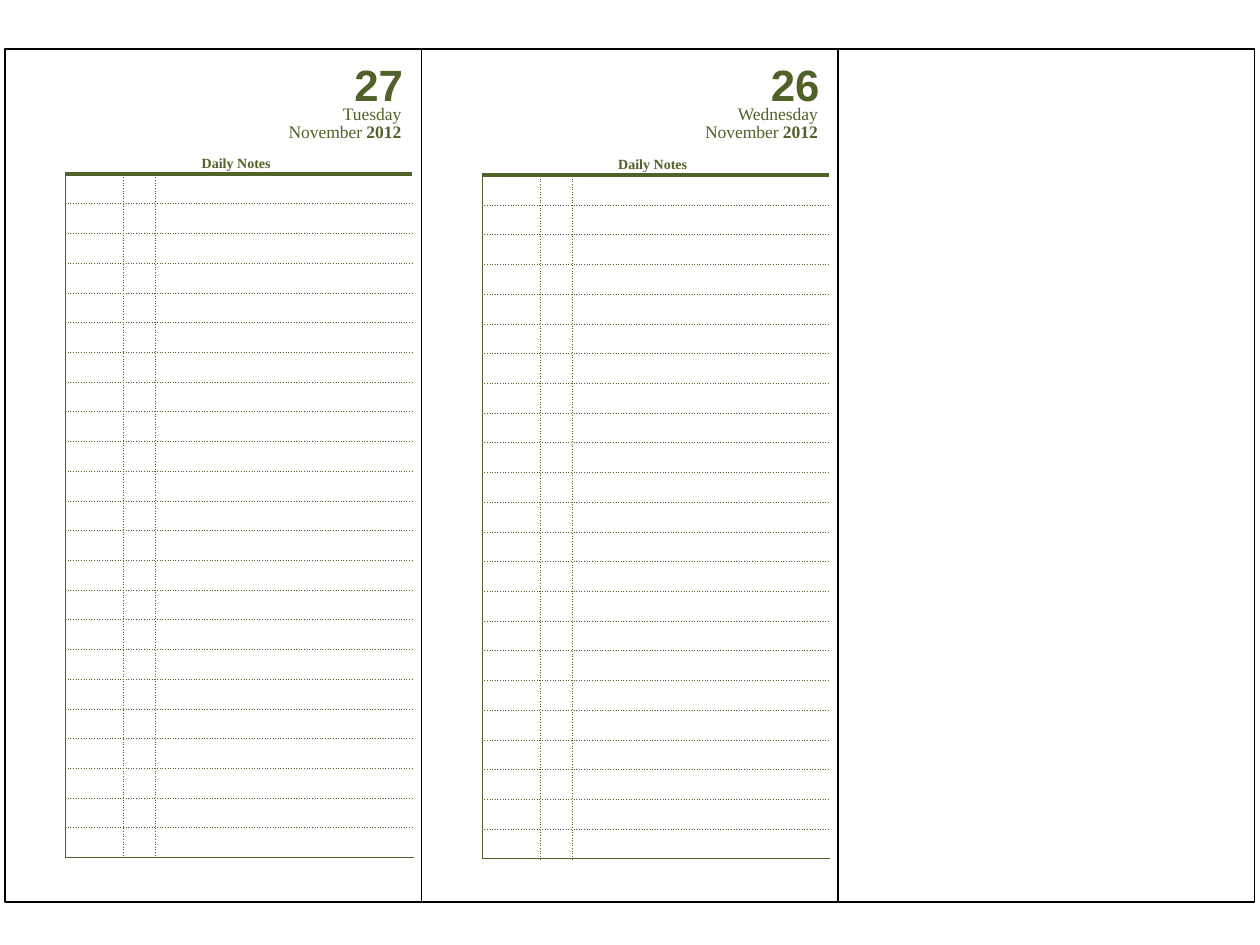
from lxml import etree
from pptx import Presentation
from pptx.dml.color import RGBColor
from pptx.enum import shapes, text
from pptx.oxml import ns
from pptx.util import Pt

COLORS = {"frame": "000000", "green": "4F6228", "blank": "FFFFFF"}
SERIF = "Times New Roman"

PAGE_LEFT, PAGE_TOP = 2.88, 28.08
PAGE_WIDTH, PAGE_HEIGHT = 238, 487.44
COLUMN_WIDTHS = (33.12, 18.36, 147.24)
ROW_COUNT, ROW_HEIGHT = 23, 17

# Border styles: colour name, width in points, dash
DOTTED = ("green", 0.25, "dot")
THIN = ("green", 0.5, "solid")
THICK = ("green", 2.25, "solid")
OPEN_EDGE = ("blank", 1, "solid")


def color(name):
    return RGBColor.from_string(COLORS[name])


def add_page_frame(slide, left):
    shape = slide.shapes.add_shape(
        shapes.MSO_SHAPE.RECTANGLE,
        Pt(left), Pt(PAGE_TOP), Pt(PAGE_WIDTH), Pt(PAGE_HEIGHT))
    shape.shadow.inherit = False
    shape.fill.background()
    shape.line.color.rgb = color("frame")
    shape.line.width = Pt(1)


def add_text(slide, lines, left, top, width, height, size, font=SERIF,
             align=None, line_spacing=None):
    """Add a text box; each line is a list of (text, bold) runs."""
    box = slide.shapes.add_textbox(Pt(left), Pt(top), Pt(width), Pt(height))
    frame = box.text_frame
    frame.word_wrap = True
    frame.auto_size = text.MSO_AUTO_SIZE.SHAPE_TO_FIT_TEXT
    for index, runs in enumerate(lines):
        paragraph = frame.add_paragraph() if index else frame.paragraphs[0]
        paragraph.alignment = align
        if line_spacing:
            paragraph.line_spacing = Pt(line_spacing)
        for content, bold in runs:
            run = paragraph.add_run()
            run.text = content
            run.font.name = font
            run.font.size = Pt(size)
            run.font.bold = bold
            run.font.color.rgb = color("green")


def set_border(cell, side, style):
    name, width, dash = style
    properties = cell._tc.get_or_add_tcPr()
    line = etree.SubElement(properties, ns.qn(f"a:ln{side}"), w=str(Pt(width)))
    fill = etree.SubElement(line, ns.qn("a:solidFill"))
    etree.SubElement(fill, ns.qn("a:srgbClr"), val=COLORS[name])
    etree.SubElement(line, ns.qn("a:prstDash"), val=dash)


def format_empty_cell(cell):
    """Keep the blank paragraph small enough for the row height."""
    cell.margin_top = cell.margin_bottom = 0
    paragraph = cell.text_frame.paragraphs[0]
    etree.SubElement(paragraph._p, ns.qn("a:endParaRPr"), sz="800")


def add_notes_grid(slide, left, top):
    table = slide.shapes.add_table(
        ROW_COUNT, len(COLUMN_WIDTHS), Pt(left), Pt(top),
        Pt(sum(COLUMN_WIDTHS)), Pt(ROW_COUNT * ROW_HEIGHT)).table
    table.first_row = table.horz_banding = False
    for column, width in zip(table.columns, COLUMN_WIDTHS):
        column.width = Pt(width)
    last_row, last_column = ROW_COUNT - 1, len(COLUMN_WIDTHS) - 1
    for row_index, row in enumerate(table.rows):
        row.height = Pt(ROW_HEIGHT)
        for column_index, cell in enumerate(row.cells):
            format_empty_cell(cell)
            set_border(cell, "L", DOTTED if column_index else THIN)
            set_border(cell, "R", OPEN_EDGE if column_index == last_column else DOTTED)
            set_border(cell, "T", DOTTED if row_index else THICK)
            set_border(cell, "B", THIN if row_index == last_row else DOTTED)
            cell.fill.background()


def add_day(slide, left, day, weekday, notes_top):
    add_text(slide, [[(day, True)]], left + 192.6, 29.52, 45.36, 37.44,
             size=25, font="Arial")
    add_text(slide, [[(weekday, False)], [("November ", False), ("2012", True)]],
             left + 103.2, 57.6, 130.32, 27.36, size=10,
             align=text.PP_ALIGN.RIGHT, line_spacing=10)
    add_text(slide, [[("Daily Notes", True)]], left + 30.96, notes_top,
             202.32, 17.28, size=8, align=text.PP_ALIGN.CENTER, line_spacing=10)
    add_notes_grid(slide, left + 34.56, notes_top + 15.12)


def main():
    presentation = Presentation()
    presentation.slide_width, presentation.slide_height = Pt(720), Pt(540)
    slide = presentation.slides.add_slide(presentation.slide_layouts[6])
    page_lefts = [PAGE_LEFT + index * PAGE_WIDTH for index in range(3)]
    for left in page_lefts:
        add_page_frame(slide, left)
    days = [("27", "Tuesday", 84.24), ("26", "Wednesday", 84.96)]
    for left, day in zip(page_lefts, days):
        add_day(slide, left, *day)
    presentation.save("out.pptx")


if __name__ == "__main__":
    main()
